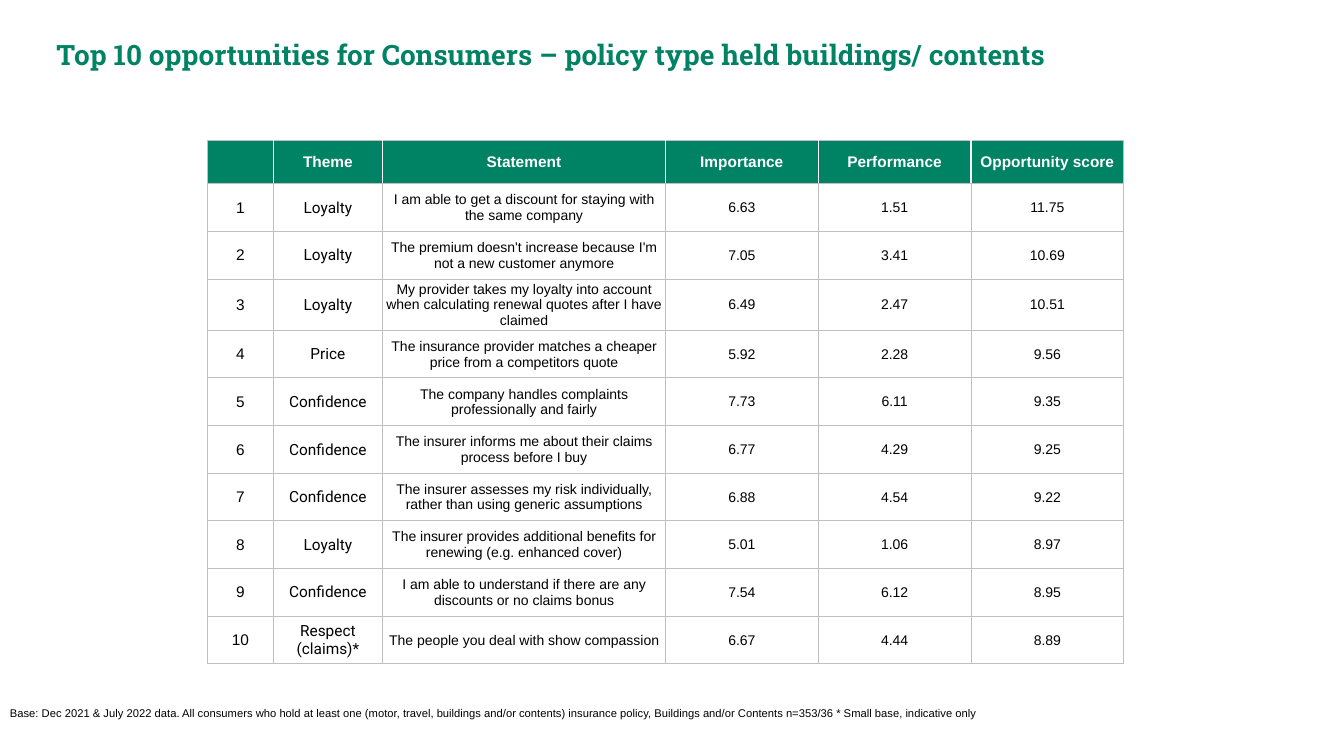
from dataclasses import dataclass

from lxml import etree
from pptx import Presentation
from pptx.dml.color import RGBColor
from pptx.enum.text import MSO_ANCHOR, PP_ALIGN
from pptx.oxml.ns import qn
from pptx.util import Cm, Pt

MIDDLE = MSO_ANCHOR.MIDDLE
CENTER = PP_ALIGN.CENTER


@dataclass(frozen=True)
class Theme:
    green: str = "008265"
    white: str = "FFFFFF"
    black: str = "000000"
    grey: str = "BFBFBF"
    title_font: str = "Roboto Slab"
    theme_font: str = "Roboto"
    body_font: str = "Arial"
    title_size: int = 20
    label_size: int = 11
    body_size: int = 10
    note_size: int = 8
    grid_width: float = 0.75
    header_width: float = 1


TITLE = "Top 10 opportunities for Consumers – policy type held buildings/ contents"
NOTE = (
    "Base: Dec 2021 & July 2022 data. All consumers who hold at least one "
    "(motor, travel, buildings and/or contents) insurance policy, "
    "Buildings and/or Contents n=353/36 * Small base, indicative only"
)
HEADINGS = ("", "Theme", "Statement", "Importance", "Performance", "Opportunity score")
OPPORTUNITIES = (
    ("Loyalty", "I am able to get a discount for staying with the same company", "6.63", "1.51", "11.75"),
    ("Loyalty", "The premium doesn't increase because I'm not a new customer anymore", "7.05", "3.41", "10.69"),
    ("Loyalty", "My provider takes my loyalty into account when calculating renewal quotes after I have claimed",
     "6.49", "2.47", "10.51"),
    ("Price", "The insurance provider matches a cheaper price from a competitors quote", "5.92", "2.28", "9.56"),
    ("Confidence", "The company handles complaints professionally and fairly", "7.73", "6.11", "9.35"),
    ("Confidence", "The insurer informs me about their claims process before I buy", "6.77", "4.29", "9.25"),
    ("Confidence", "The insurer assesses my risk individually, rather than using generic assumptions",
     "6.88", "4.54", "9.22"),
    ("Loyalty", "The insurer provides additional benefits for renewing (e.g. enhanced cover)",
     "5.01", "1.06", "8.97"),
    ("Confidence", "I am able to understand if there are any discounts or no claims bonus", "7.54", "6.12", "8.95"),
    ("Respect (claims)*", "The people you deal with show compassion", "6.67", "4.44", "8.89"),
)
COLUMN_WIDTHS = (1.66, 2.75, 7.13, 3.85, 3.85, 3.85)
HEADER_HEIGHT = 1.09
ROW_HEIGHT = 1.2


class SlideBuilder:
    def __init__(self, page, theme):
        self.page = page
        self.theme = theme

    def style(self, para, font, size, color, bold=False):
        for span in para.runs:
            span.font.name = font
            span.font.size = Pt(size)
            span.font.bold = bold
            span.font.color.rgb = RGBColor.from_string(color)

    def text(self, words, left, top, width, height, font, size, color, bold=False):
        box = self.page.shapes.add_textbox(Cm(left), Cm(top), Cm(width), Cm(height))
        frame = box.text_frame
        frame.word_wrap = True
        frame.text = words
        self.style(frame.paragraphs[0], font, size, color, bold)

    def border(self, cell, side, color, width):
        properties = cell._tc.get_or_add_tcPr()
        line = etree.SubElement(properties, qn(f"a:ln{side}"), w=str(Pt(width)))
        fill = etree.SubElement(line, qn("a:solidFill"))
        etree.SubElement(fill, qn("a:srgbClr"), val=color)

    def cell(self, cell, words, row, column):
        theme = self.theme
        header = row == 0
        last = len(COLUMN_WIDTHS) - 1
        cell.margin_left = cell.margin_right = cell.margin_top = Cm(0.02)
        cell.margin_bottom = 0
        cell.vertical_anchor = MIDDLE

        grid = (theme.grey, theme.grid_width)
        divider = (theme.white, theme.header_width) if header else grid
        self.border(cell, "L", *(grid if column == 0 else divider))
        self.border(cell, "R", *(grid if column == last else divider))
        self.border(cell, "T", *grid)
        self.border(cell, "B", *grid)

        if header:
            cell.fill.solid()
            cell.fill.fore_color.rgb = RGBColor.from_string(theme.green)
        else:
            cell.fill.background()

        para = cell.text_frame.paragraphs[0]
        para.alignment = CENTER
        if words:
            para.text = words
        font = theme.theme_font if column == 1 and not header else theme.body_font
        size = theme.label_size if header or column < 2 else theme.body_size
        self.style(para, font, size, theme.white if header else theme.black, header)

    def table(self, rows, left, top):
        height = HEADER_HEIGHT + ROW_HEIGHT * (len(rows) - 1)
        frame = self.page.shapes.add_table(
            len(rows), len(COLUMN_WIDTHS), Cm(left), Cm(top), Cm(sum(COLUMN_WIDTHS)), Cm(height)
        )
        table = frame.table
        table.horz_banding = False
        for column, width in zip(table.columns, COLUMN_WIDTHS):
            column.width = Cm(width)
        for row, values in enumerate(rows):
            table.rows[row].height = Cm(ROW_HEIGHT if row else HEADER_HEIGHT)
            for column, words in enumerate(values):
                self.cell(table.cell(row, column), words, row, column)


def main():
    deck = Presentation()
    deck.slide_width = Cm(33.87)
    deck.slide_height = Cm(19.05)
    page = deck.slides.add_slide(deck.slide_layouts[6])
    theme = Theme()
    builder = SlideBuilder(page, theme)
    builder.text(TITLE, 1.17, 0.81, 31.19, 1.12, theme.title_font, theme.title_size, theme.green, True)
    ranked = [(str(rank), *values) for rank, values in enumerate(OPPORTUNITIES, 1)]
    builder.table([HEADINGS, *ranked], 5.23, 3.54)
    builder.text(NOTE, 0, 17.68, 27.69, 1.37, theme.body_font, theme.note_size, theme.black)
    deck.save("out.pptx")


if __name__ == "__main__":
    main()
